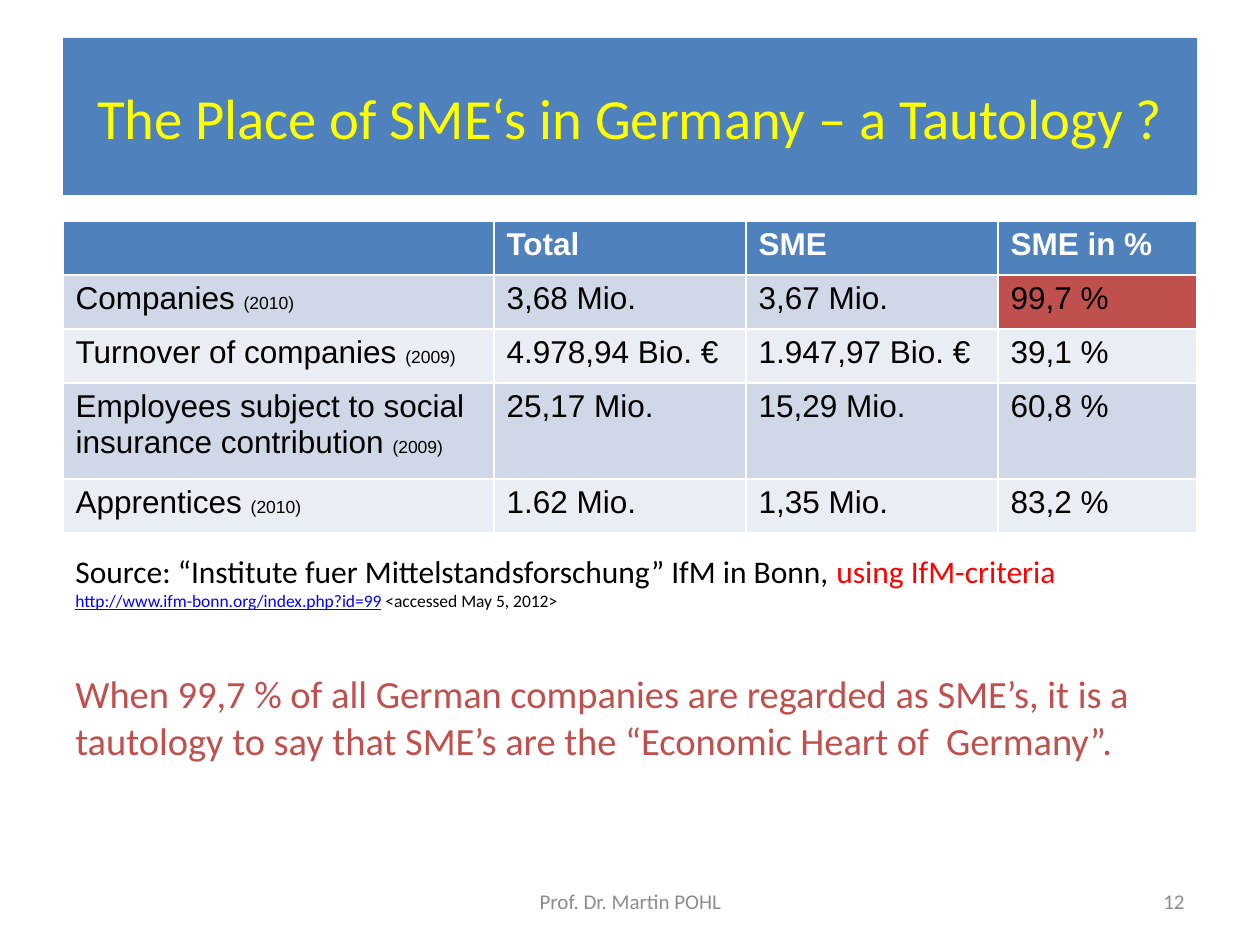
from pptx import Presentation, util as u
from pptx.dml.color import RGBColor
from pptx.enum import text

BLUE = RGBColor(0x4F, 0x81, 0xBD)
RED = RGBColor(0xC0, 0x50, 0x4D)
PALE = RGBColor(0xD0, 0xD8, 0xE8)
LIGHT = RGBColor(0xE9, 0xED, 0xF4)
WHITE = RGBColor(0xFF, 0xFF, 0xFF)
BLACK = RGBColor(0, 0, 0)
YELLOW = RGBColor(0xFF, 0xFF, 0)
BRIGHT = RGBColor(0xFF, 0, 0)
LINK = RGBColor(0, 0, 0xFF)
GREY = RGBColor(0x8C, 0x8C, 0x8C)

TITLE = "The Place of SME‘s in Germany – a Tautology ?"
HEAD = ["", "Total", "SME", "SME in %"]
ROWS = [
    ("Companies ", "(2010)", "3,68 Mio.", "3,67 Mio.", "99,7 %"),
    ("Turnover of companies ", "(2009)", "4.978,94 Bio. €", "1.947,97 Bio. €", "39,1 %"),
    ("Employees subject to social insurance contribution ", "(2009)",
     "25,17 Mio.", "15,29 Mio.", "60,8 %"),
    ("Apprentices ", "(2010)", "1.62 Mio.", "1,35 Mio.", "83,2 %"),
]
NOTES = [
    (0, [("Source: “Institute fuer Mittelstandsforschung” IfM in Bonn, ", {}),
         ("using IfM-criteria", {"color": BRIGHT})]),
    (0, [("http://www.ifm-bonn.org/index.php?id=99",
          {"size": 10, "color": LINK, "line": True}),
         (" <accessed May 5, 2012>", {"size": 10})]),
    (34, [("When 99,7 % of all German companies are regarded as SME’s, it is a "
           "tautology to say that SME’s are the “Economic Heart of  Germany”.",
           {"size": 22, "color": RED})]),
]
FOOT = [
    ("12", 903, 294, text.PP_ALIGN.RIGHT),
    ("Prof. Dr. Martin POHL", 431, 399, text.PP_ALIGN.CENTER),
]
COLS = [431, 252, 252, 199]
HIGH = [54, 54, 54, 96, 54]
LEFT, WIDE = 63, 1134


def px(n):
    return u.Emu(round(n * 914400 / 126))


def write(par, words, size=18, color=BLACK, font="Calibri", bold=False, line=False):
    run = par.add_run()
    run.text = words
    face = run.font
    face.size, face.name, face.bold = u.Pt(size), font, bold
    face.underline = line
    face.color.rgb = color


def add_box(slide, x, y, w, h):
    frame = slide.shapes.add_textbox(px(x), px(y), px(w), px(h)).text_frame
    frame.word_wrap = True
    return frame


def add_title(slide):
    box = slide.shapes.title
    box.left, box.top, box.width, box.height = map(px, (LEFT, 38, WIDE, 157))
    box.fill.solid()
    box.fill.fore_color.rgb = BLUE
    frame = box.text_frame
    frame.auto_size = text.MSO_AUTO_SIZE.NONE
    frame.vertical_anchor = text.MSO_ANCHOR.MIDDLE
    par = frame.paragraphs[0]
    par.alignment = text.PP_ALIGN.CENTER
    write(par, TITLE, size=32.4, color=YELLOW)


def add_grid(slide):
    grid = slide.shapes.add_table(len(HIGH), len(COLS), px(LEFT), px(221),
                                  px(WIDE), px(sum(HIGH))).table
    for col, w in zip(grid.columns, COLS):
        col.width = px(w)
    for row, h in zip(grid.rows, HIGH):
        row.height = px(h)
    body = [[[(name, 18), (year, 10)]] + [[(val, 18)] for val in vals]
            for name, year, *vals in ROWS]
    data = [[[(word, 18)] if word else [] for word in HEAD]] + body
    for r, line in enumerate(data):
        for c, runs in enumerate(line):
            cell = grid.cell(r, c)
            cell.fill.solid()
            shade = BLUE if r == 0 else PALE if r % 2 else LIGHT
            cell.fill.fore_color.rgb = RED if (r, c) == (1, 3) else shade
            for words, size in runs:
                write(cell.text_frame.paragraphs[0], words, size=size, font="Arial",
                      color=BLACK if r else WHITE, bold=r == 0)


def add_notes(slide):
    frame = add_box(slide, LEFT, 546, WIDE, 263)
    for i, (gap, runs) in enumerate(NOTES):
        par = frame.add_paragraph() if i else frame.paragraphs[0]
        par.space_before = u.Pt(gap)
        for words, form in runs:
            write(par, words, **form)


def add_foot(slide):
    for words, x, w, side in FOOT:
        frame = add_box(slide, x, 876, w, 50)
        frame.vertical_anchor = text.MSO_ANCHOR.MIDDLE
        par = frame.paragraphs[0]
        par.alignment = side
        write(par, words, size=12, color=GREY)


def main():
    deck = Presentation()
    deck.slide_width, deck.slide_height = px(1260), px(945)
    slide = deck.slides.add_slide(deck.slide_layouts[5])
    add_title(slide)
    add_grid(slide)
    add_notes(slide)
    add_foot(slide)
    deck.save("out.pptx")


if __name__ == "__main__":
    main()
